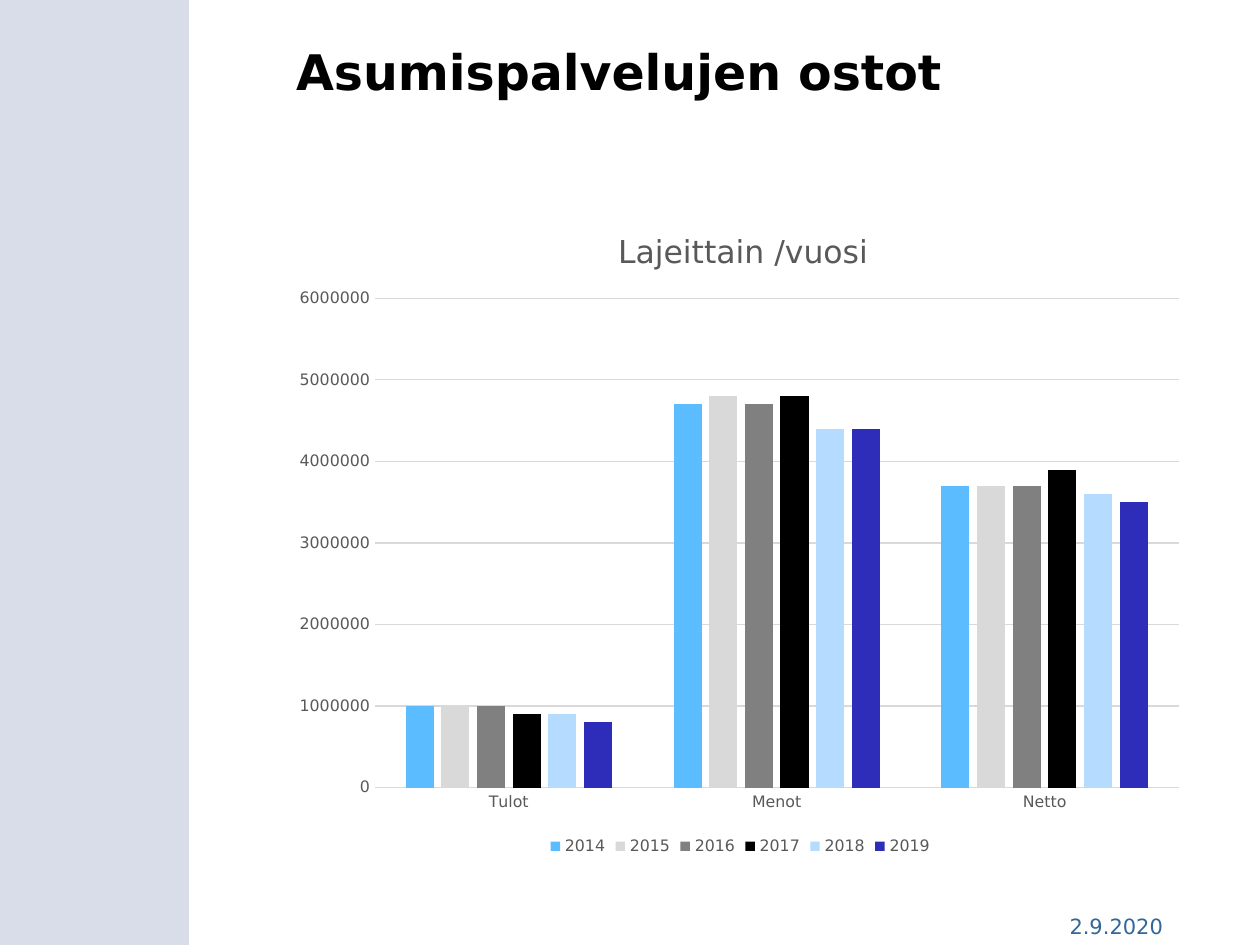
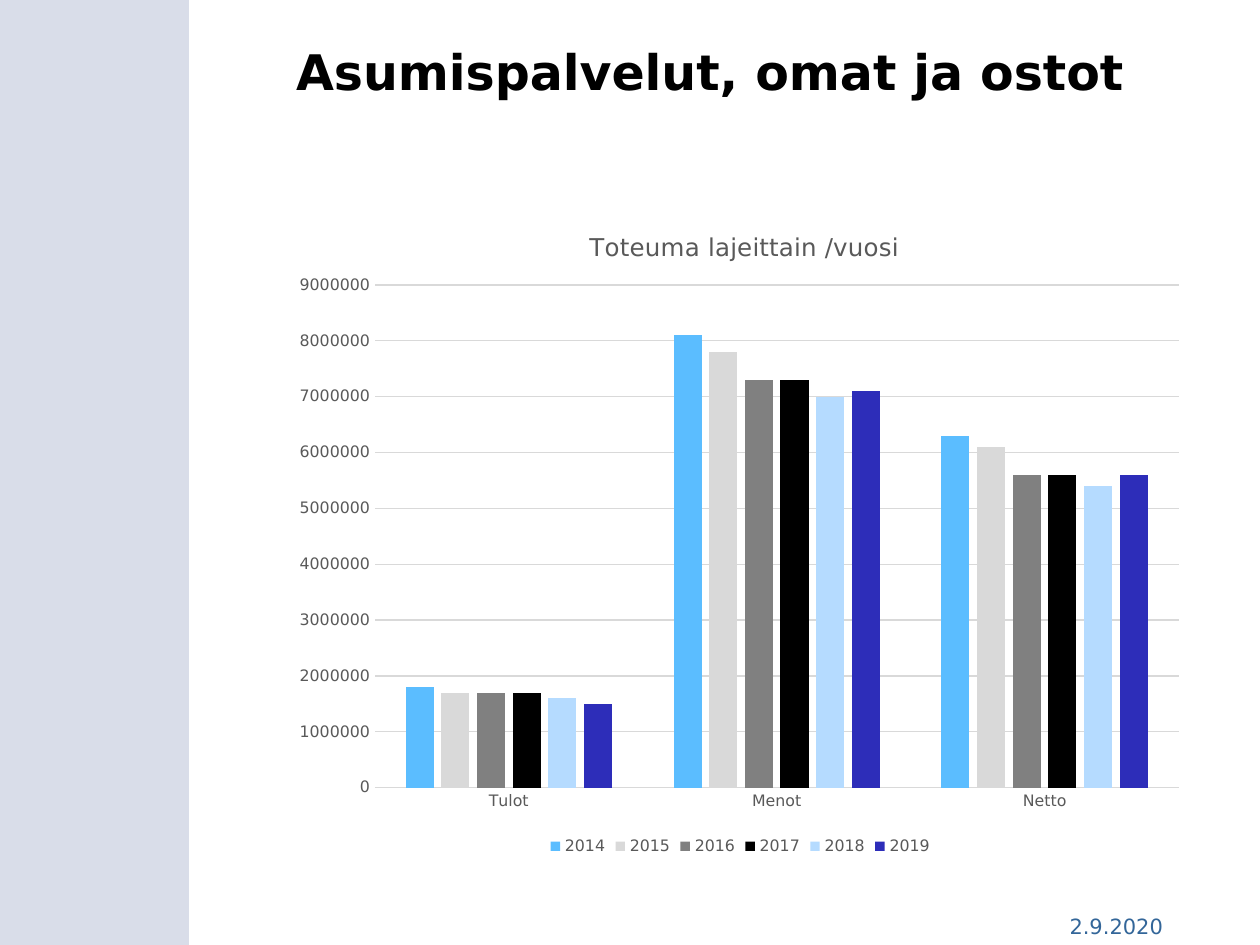
import dataclasses
import pptx
import pptx.util
import pptx.dml.color
import pptx.chart.data
import pptx.enum.chart
import pptx.enum.shapes
import pptx.enum.text
import pptx.oxml
import pptx.oxml.ns

PX = 9144  # 100 px to the inch


@dataclasses.dataclass(frozen=True)
class Theme:
    font: str = "DejaVu Sans"
    band: str = "D9DDE9"
    date: str = "336699"
    ink: str = "000000"
    grey: str = "595959"
    grid: str = "D9D9D9"
    bars: tuple = ("5BBDFF", "D9D9D9", "808080", "000000", "B5DBFF", "2D2DB9")
    head: int = 28
    foot: int = 12
    base: int = 10
    label: int = 9


THEME = Theme()
YEARS = range(2014, 2020)
KINDS = ("Tulot", "Menot", "Netto")
MILLION = 1_000_000

# Amounts in millions: one row per kind, one column per year
BOUGHT = ((1.0, 1.0, 1.0, 0.9, 0.9, 0.8),
          (4.7, 4.8, 4.7, 4.8, 4.4, 4.4),
          (3.7, 3.7, 3.7, 3.9, 3.6, 3.5))
TOTAL = ((1.8, 1.7, 1.7, 1.7, 1.6, 1.5),
         (8.1, 7.8, 7.3, 7.3, 7.0, 7.1),
         (6.3, 6.1, 5.6, 5.6, 5.4, 5.6))


def box(*sides):
    return [pptx.util.Emu(side * PX) for side in sides]


def tint(code):
    return pptx.dml.color.RGBColor.from_string(code)


def style(font, size, color, bold=False):
    font.name = THEME.font
    font.size = pptx.util.Pt(size)
    font.bold = bold
    font.color.rgb = tint(color)


def write(frame, text, size, color, bold=False):
    para = frame.paragraphs[0]
    run = para.add_run()
    run.text = text
    style(run.font, size, color, bold)
    return para


def add_band(slide):
    band = slide.shapes.add_shape(
        pptx.enum.shapes.MSO_SHAPE.RECTANGLE, *box(0, 0, 150, 750))
    band.shadow.inherit = False
    band.fill.solid()
    band.fill.fore_color.rgb = tint(THEME.band)
    band.line.fill.background()


def add_date(slide, text):
    frame = slide.shapes.add_textbox(*box(839, 720, 106, 30)).text_frame
    frame.word_wrap = True
    write(frame, text, THEME.foot, THEME.date)


def set_title(slide, text, height):
    title = slide.shapes.title
    title.left, title.top, title.width, title.height = box(225, 33, 725, height)
    frame = title.text_frame
    frame.auto_size = pptx.enum.text.MSO_AUTO_SIZE.NONE
    frame.vertical_anchor = pptx.enum.text.MSO_ANCHOR.TOP
    para = write(frame, text, THEME.head, THEME.ink, True)
    para.alignment = pptx.enum.text.PP_ALIGN.LEFT
    para.line_spacing = 0.9


def place(chart, tag, index, inner=False, **spot):
    """Pin a chart part to fractions of the chart's size."""
    part = chart.element.find(".//" + pptx.oxml.ns.qn(tag))
    for old in part.findall(pptx.oxml.ns.qn("c:layout")):
        part.remove(old)
    target = '<c:layoutTarget val="inner"/>' if inner else ""
    modes = "".join(f'<c:{key}Mode val="edge"/>' for key in "xy")
    sides = "".join(f'<c:{key} val="{val}"/>' for key, val in spot.items())
    part.insert(index, pptx.oxml.parse_xml(
        f'<c:layout {pptx.oxml.ns.nsdecls("c")}><c:manualLayout>'
        f'{target}{modes}{sides}</c:manualLayout></c:layout>'))


def set_line(line):
    line.color.rgb = tint(THEME.grid)
    line.width = pptx.util.Pt(0.75)


def set_axes(chart, top):
    for axis in (chart.category_axis, chart.value_axis):
        axis.major_tick_mark = pptx.enum.chart.XL_TICK_MARK.NONE
        axis.minor_tick_mark = pptx.enum.chart.XL_TICK_MARK.NONE
        style(axis.tick_labels.font, THEME.label, THEME.grey)
    set_line(chart.category_axis.format.line)
    value = chart.value_axis
    value.format.line.fill.background()
    value.minimum_scale = 0
    value.maximum_scale = top * MILLION
    value.major_unit = MILLION
    value.has_major_gridlines = True
    set_line(value.major_gridlines.format.line)


def add_chart(slide, title, size, left, rows, top, start):
    """Draw yearly columns; left pins the title, start the plot's top."""
    data = pptx.chart.data.CategoryChartData()
    data.categories = KINDS
    for year, vals in zip(YEARS, zip(*rows)):
        data.add_series(str(year), [round(val * MILLION) for val in vals])
    chart = slide.shapes.add_chart(
        pptx.enum.chart.XL_CHART_TYPE.COLUMN_CLUSTERED,
        *box(225, 158, 725, 525), data).chart
    style(chart.font, THEME.base, THEME.ink)

    chart.has_title = True
    write(chart.chart_title.text_frame, title, size, THEME.grey)
    place(chart, "c:title", 1, x=left, y=0.04)
    place(chart, "c:plotArea", 0, inner=True,
          x=0.1, y=start, w=0.88, h=round(0.89 - start, 2))

    plot = chart.plots[0]
    plot.vary_by_categories = False
    plot.gap_width = 219
    plot.overlap = -27
    for bar, color in zip(plot.series, THEME.bars):
        bar.format.fill.solid()
        bar.format.fill.fore_color.rgb = tint(color)
    set_axes(chart, top)

    chart.has_legend = True
    chart.legend.position = pptx.enum.chart.XL_LEGEND_POSITION.BOTTOM
    chart.legend.include_in_layout = False
    style(chart.legend.font, THEME.label, THEME.grey)


def add_slide(deck, title, height):
    slide = deck.slides.add_slide(deck.slide_layouts[5])
    add_band(slide)
    add_date(slide, "2.9.2020")
    set_title(slide, title, height)
    return slide


def main():
    deck = pptx.Presentation()
    deck.slide_width, deck.slide_height = box(1000, 750)

    slide = add_slide(deck, "Asumispalvelujen ostot", 100)
    add_chart(slide, "Lajeittain /vuosi", 18, 0.36, BOUGHT, 6, 0.15)

    slide = add_slide(deck, "Asumispalvelut, omat ja ostot", 66)
    add_chart(slide, "Toteuma lajeittain /vuosi", 14, 0.33, TOTAL, 9, 0.13)

    deck.save("out.pptx")


if __name__ == "__main__":
    main()
